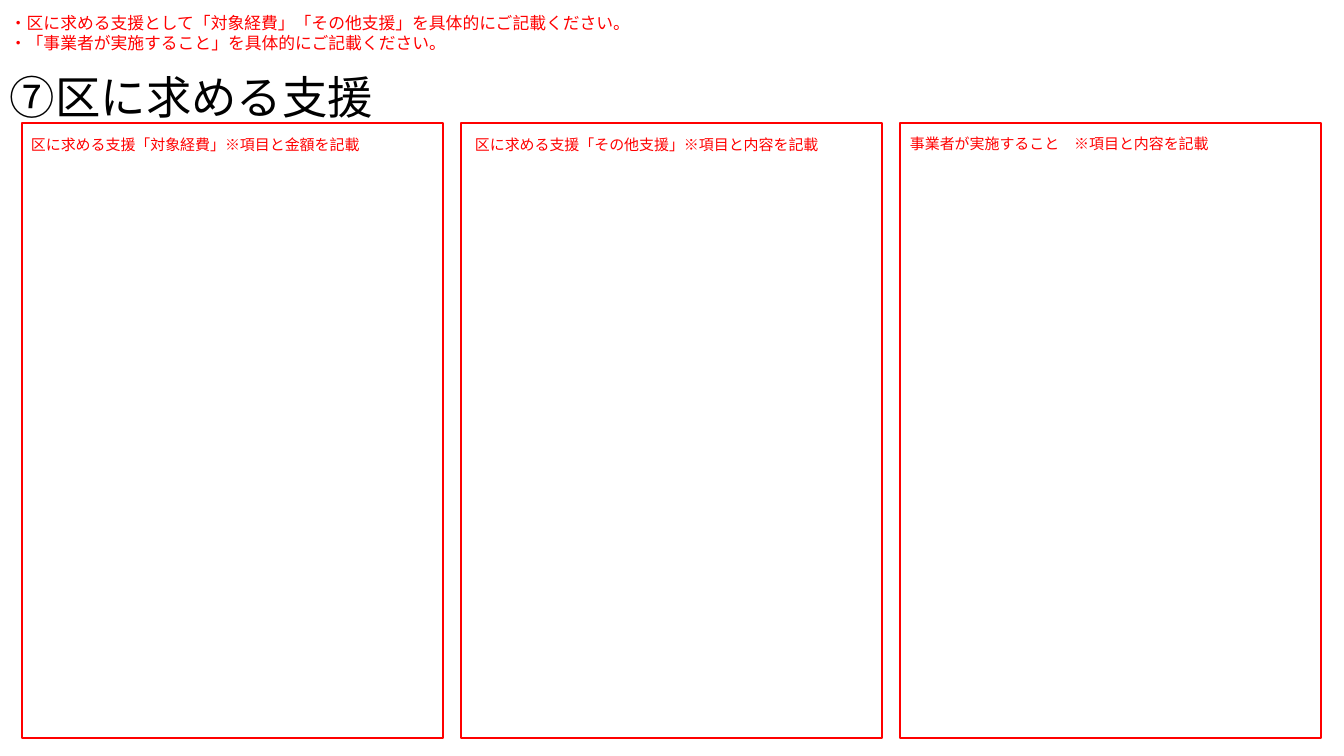
from dataclasses import dataclass

from pptx import Presentation
from pptx import util as u
from pptx.dml.color import RGBColor
from pptx.enum import shapes, text
from pptx.oxml.ns import qn


@dataclass(frozen=True)
class Theme:
    """Colours, font and type sizes of the slide."""
    font: str = "Noto Sans CJK JP"
    ink: str = "000000"
    accent: str = "FF0000"
    paper: str = "FFFFFF"
    title: float = 32.4
    label: float = 10.7
    note: float = 12
    border: float = 1.5


THEME = Theme()
FRAME_LEFT, FRAME_TOP, FRAME_WIDTH, FRAME_HEIGHT = 22, 123, 421, 615
FRAME_PITCH = 439
LABEL_HEIGHT = 36
LABELS = [
    ("区に求める支援「対象経費」※項目と金額を記載", 21, 122, 410),
    ("区に求める支援「その他支援」※項目と内容を記載", 465, 122, 385),
    ("事業者が実施すること　※項目と内容を記載", 900, 121, 385),
]
NOTES = (
    "・区に求める支援として「対象経費」「その他支援」を具体的にご記載ください。\n"
    "・「事業者が実施すること」を具体的にご記載ください。"
)


def px(length):
    """Turn pixels into EMU at 100.8 pixels to the inch."""
    return u.Emu(round(length * 914400 / 100.8))


def add_text(page, words, *, left, top, width, height, size, color, spacing=1.0):
    """Add a vertically centred text box with one paragraph per line."""
    box = page.shapes.add_textbox(px(left), px(top), px(width), px(height))
    frame = box.text_frame
    frame.word_wrap = True
    frame.vertical_anchor = text.MSO_ANCHOR.MIDDLE
    frame.text = words
    for para in frame.paragraphs:
        para.line_spacing = spacing
        for span in para.runs:
            span.font.size = u.Pt(size)
            span.font.name = THEME.font
            span.font.color.rgb = RGBColor.from_string(color)
            east_asian = span.font._element.makeelement(qn("a:ea"), {"typeface": THEME.font})
            span.font._element.find(qn("a:latin")).addnext(east_asian)


def add_frame(page, left):
    """Add one empty entry frame."""
    box = page.shapes.add_shape(
        shapes.MSO_SHAPE.RECTANGLE, px(left), px(FRAME_TOP), px(FRAME_WIDTH), px(FRAME_HEIGHT))
    box.shadow.inherit = False
    box.fill.solid()
    box.fill.fore_color.rgb = RGBColor.from_string(THEME.paper)
    box.line.color.rgb = RGBColor.from_string(THEME.accent)
    box.line.width = u.Pt(THEME.border)


def main():
    """Build the support request slide."""
    deck = Presentation()
    deck.slide_width, deck.slide_height = px(1344), px(756)
    page = deck.slides.add_slide(deck.slide_layouts[6])
    add_text(page, "⑦区に求める支援", left=0, top=53, width=1159, height=70,
             size=THEME.title, color=THEME.ink, spacing=1.3)
    for column in range(len(LABELS)):
        add_frame(page, FRAME_LEFT + column * FRAME_PITCH)
    for words, left, top, width in LABELS:
        add_text(page, words, left=left, top=top, width=width, height=LABEL_HEIGHT,
                 size=THEME.label, color=THEME.accent, spacing=1.5)
    add_text(page, NOTES, left=0, top=-12, width=1333, height=89,
             size=THEME.note, color=THEME.accent)
    deck.save("out.pptx")


if __name__ == "__main__":
    main()
